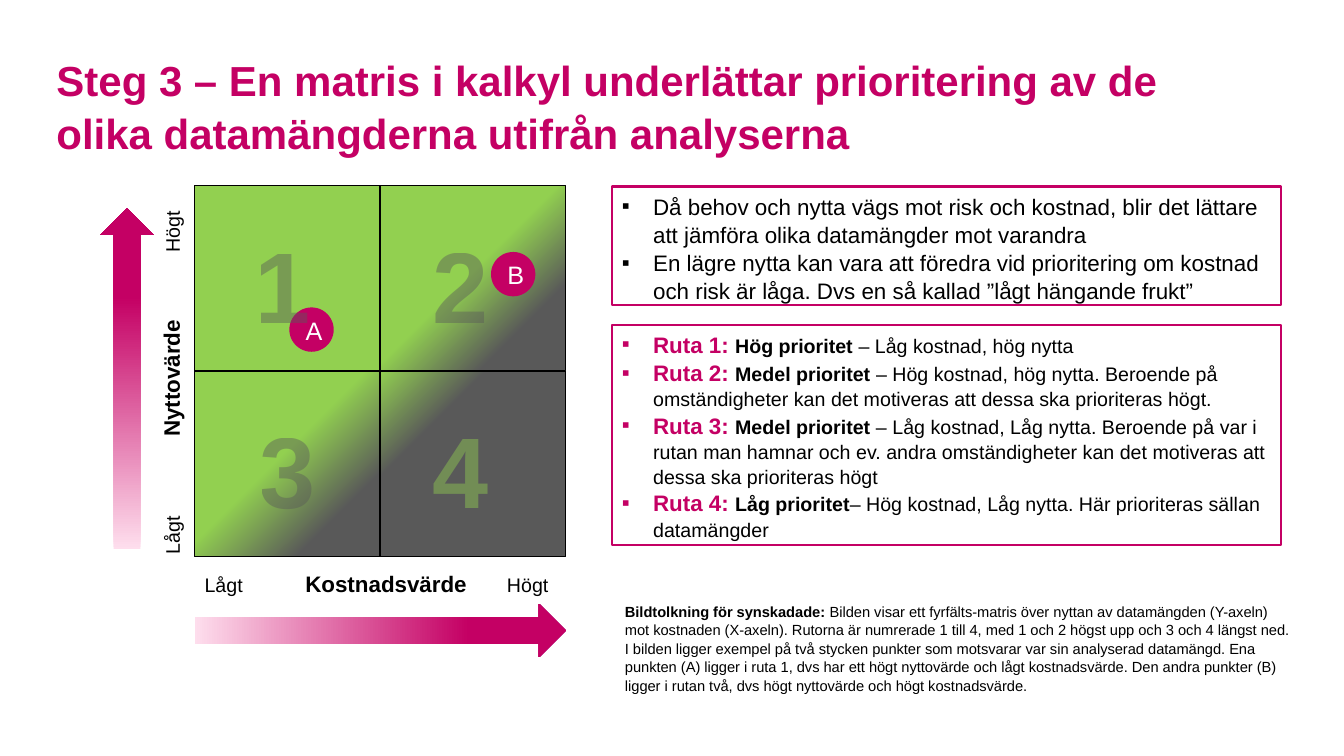
from lxml.etree import SubElement
from pptx import Presentation
from pptx.dml.color import RGBColor
from pptx.enum.shapes import MSO_SHAPE
from pptx.enum.text import MSO_ANCHOR, PP_ALIGN
from pptx.oxml.ns import qn
from pptx.util import Inches, Pt

# Content: a run is (text, size, bold, colour)
COLORS = {"pink": "C40064", "pale": "FEDEED", "green": "92D050",
          "gray": "595959", "black": "000000", "white": "FFFFFF"}
TITLE = ("Steg 3 – En matris i kalkyl underlättar prioritering av de "
         "olika datamängderna utifrån analyserna")
POINTS = [
    "Då behov och nytta vägs mot risk och kostnad, blir det lättare att jämföra "
    "olika datamängder mot varandra",
    "En lägre nytta kan vara att föredra vid prioritering om kostnad och risk är "
    "låga. Dvs en så kallad ”lågt hängande frukt”",
]
RULES = [
    ("Ruta 1: ", "Hög prioritet ", "– Låg kostnad, hög nytta"),
    ("Ruta 2: ", "Medel prioritet ", "– Hög kostnad, hög nytta. Beroende på "
     "omständigheter kan det motiveras att dessa ska prioriteras högt."),
    ("Ruta 3: ", "Medel prioritet", " – Låg kostnad, Låg nytta. Beroende på var i "
     "rutan man hamnar och ev. andra omständigheter kan det motiveras att dessa "
     "ska prioriteras högt"),
    ("Ruta 4: ", "Låg prioritet", "– Hög kostnad, Låg nytta. Här prioriteras "
     "sällan datamängder"),
]
NOTE = [
    ("Bildtolkning för synskadade: ", 10.5, True, "black"),
    ("Bilden visar ett fyrfälts-matris över nyttan av datamängden (Y-axeln) mot "
     "kostnaden (X-axeln). Rutorna är numrerade 1 till 4, med 1 och 2 högst upp "
     "och 3 och 4 längst ned. I bilden ligger exempel på två stycken punkter som "
     "motsvarar var sin analyserad datamängd. Ena punkten (A) ligger i ruta 1, dvs "
     "har ett högt nyttovärde och lågt kostnadsvärde. Den andra punkter (B) ligger "
     "i rutan två, dvs högt nyttovärde och högt kostnadsvärde.",
     10.5, False, "black"),
]
# Gradient start and end per cell, in percent (None is plain green)
CELLS = [None, (48, 77), (46, 78), (0, 29)]
DIGITS = [("1", 2.43, "gray"), ("2", 4.19, "gray"),
          ("3", 2.48, "gray"), ("4", 4.19, "green")]
DOTS = [("A", 2.87, 3.05), ("B", 4.87, 2.5)]
# Box, turn, middle word, tab stops
AXES = [((1.93, 5.59, 3.68, 0.37), 0, "Kostnadsvärde", (1, 3)),
        ((-0.28, 3.45, 3.93, 0.37), 270, "Nyttovärde", (1.17, 3))]
ARROWS = [((1.93, 5.99, 3.68, 0.53), 0), ((-0.43, 3.49, 3.38, 0.53), 270)]
LEFT, TOP, SIDE = 1.93, 1.84, 1.84

deck = Presentation()
deck.slide_width, deck.slide_height = Inches(13.33), Inches(7.5)
slide = deck.slides.add_slide(deck.slide_layouts[6])


def rgb(name):
    return RGBColor.from_string(COLORS[name])


def write(shape, paras, bullet=False, tabs=(), align=PP_ALIGN.LEFT):
    frame = shape.text_frame
    frame.word_wrap = True
    for i, runs in enumerate(paras):
        para = frame.paragraphs[0] if i == 0 else frame.add_paragraph()
        para.alignment, para.line_spacing = align, 1.05
        props = para._p.get_or_add_pPr()
        if bullet:
            props.set("marL", str(Inches(0.31)))
            props.set("indent", str(-Inches(0.31)))
            SubElement(props, qn("a:buFont"), typeface="Arial")
            SubElement(props, qn("a:buChar"), char="▪")
        if tabs:
            stops = SubElement(props, qn("a:tabLst"))
            for pos in tabs:
                SubElement(stops, qn("a:tab"), pos=str(Inches(pos)), algn="l")
        for text, size, bold, color in runs:
            run = para.add_run()
            run.text = text
            run.font.name, run.font.size, run.font.bold = "Arial", Pt(size), bold
            run.font.color.rgb = rgb(color)


def label(box, paras, **style):
    shape = slide.shapes.add_textbox(*map(Inches, box))
    write(shape, paras, **style)
    return shape


def draw(kind, box, fill=None, line=None, width=1):
    shape = slide.shapes.add_shape(kind, *map(Inches, box))
    shape.shadow.inherit = False
    if fill:
        shape.fill.solid()
        shape.fill.fore_color.rgb = rgb(fill)
    else:
        shape.fill.background()
    if line:
        shape.line.color.rgb = rgb(line)
        shape.line.width = Pt(width)
    else:
        shape.line.fill.background()
    return shape


def blend(shape, stops, angle):
    shape.fill.gradient()
    shape.fill.gradient_angle = -angle % 360
    marks = shape._element.spPr.find(".//" + qn("a:gsLst"))
    for mark in list(marks):
        marks.remove(mark)
    for pos, color in stops:
        mark = SubElement(marks, qn("a:gs"), pos=str(pos * 1000))
        SubElement(mark, qn("a:srgbClr"), val=COLORS[color])


# Title
title = label((0.56, 0.52, 11.08, 0.91), [[(TITLE, 30, True, "pink")]])
frame = title.text_frame
frame.margin_left = frame.margin_right = frame.margin_top = frame.margin_bottom = 0

# Matrix
for i, fade in enumerate(CELLS):
    row, col = divmod(i, 2)
    cell = draw(MSO_SHAPE.RECTANGLE,
                (LEFT + col * SIDE, TOP + row * SIDE, SIDE, SIDE), "green", "black")
    if fade:
        blend(cell, [(0, "green"), (fade[0], "green"),
                     (fade[1], "gray"), (100, "gray")], 45)

# Axes
for box, turn in ARROWS:
    arrow = draw(MSO_SHAPE.RIGHT_ARROW, box, "pink")
    arrow.rotation = turn
    blend(arrow, [(0, "pale"), (74, "pink"), (100, "pink")], 0)
for box, turn, word, tabs in AXES:
    runs = [("Lågt\t", 14, False, "black"), (word, 16, True, "black"),
            ("\tHögt", 14, False, "black")]
    label(box, [runs], tabs=tabs).rotation = turn

# Data points
for name, x, y in DOTS:
    dot = draw(MSO_SHAPE.OVAL, (x, y, 0.44, 0.44), "pink")
    write(dot, [[(name, 18, False, "white")]], align=PP_ALIGN.CENTER)
    dot.text_frame.vertical_anchor = MSO_ANCHOR.MIDDLE

# Cell numbers, see-through
for i, (digit, x, color) in enumerate(DIGITS):
    mark = label((x, 2.1 + i // 2 * SIDE, 1, 1.31), [[(digit, 72, True, color)]])
    SubElement(mark._element.find(".//" + qn("a:srgbClr")), qn("a:alpha"), val="43000")

# Text boxes
points = [[(text, 16, False, "black")] for text in POINTS]
rules = [[(cell, 16, True, "pink"), (rank, 14, True, "black"),
          (text, 14, False, "black")] for cell, rank, text in RULES]
for y, high, paras in [(1.85, 1.18, points), (3.22, 2.19, rules)]:
    panel = draw(MSO_SHAPE.RECTANGLE, (6.07, y, 6.64, high), None, "pink", 1.5)
    write(panel, paras, bullet=True)
    panel.text_frame.vertical_anchor = MSO_ANCHOR.TOP
label((6.1, 5.92, 6.84, 0.98), [NOTE])

deck.save("out.pptx")
